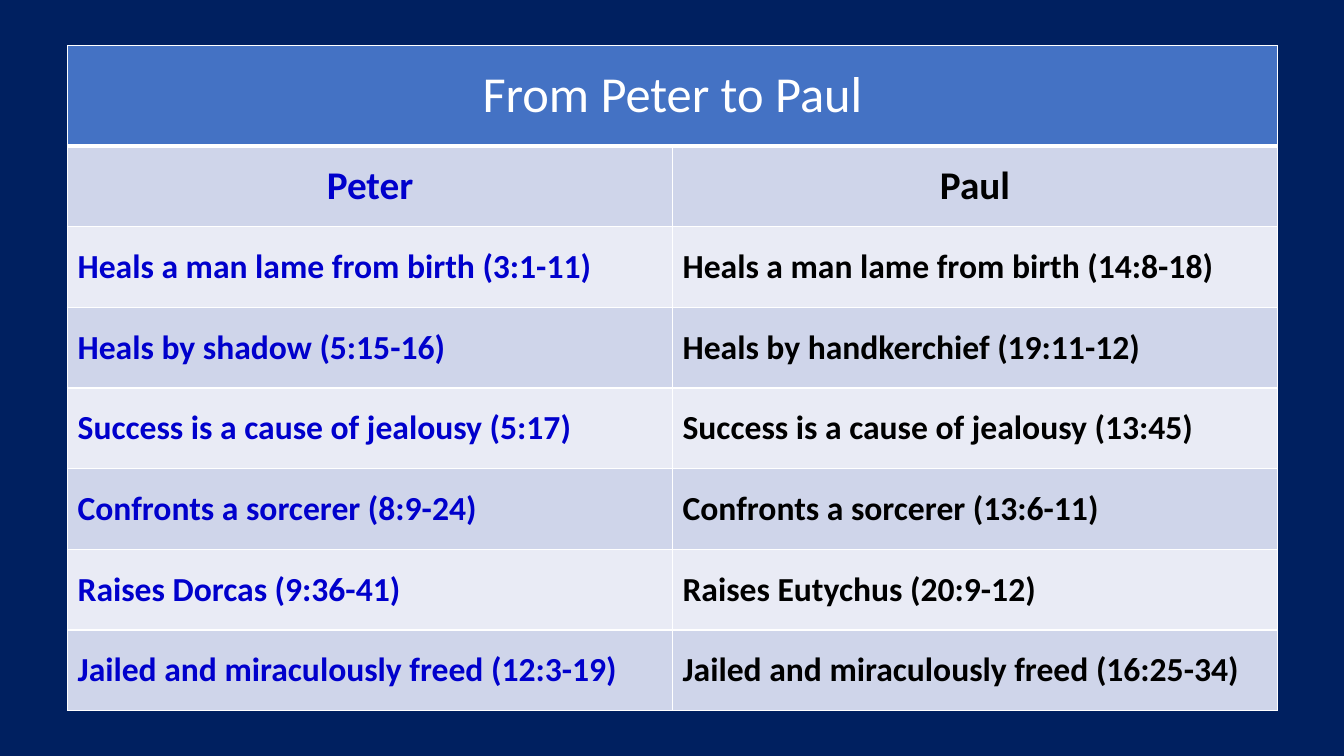
import pptx
import pptx.dml.color
import pptx.enum.text
import pptx.oxml.ns
import pptx.util
from lxml import etree

COLOURS = {
    "navy": "002060",
    "header": "4472C4",
    "band_dark": "CFD5EA",
    "band_light": "E9EBF5",
    "white": "FFFFFF",
    "peter": "0000CC",
    "paul": "000000",
}
PX = 9144  # 100 px to the inch
TITLE = "From Peter to Paul"
PARALLELS = [
    ("Peter", "Paul"),
    ("Heals a man lame from birth (3:1-11)", "Heals a man lame from birth (14:8-18)"),
    ("Heals by shadow (5:15-16)", "Heals by handkerchief (19:11-12)"),
    ("Success is a cause of jealousy (5:17)", "Success is a cause of jealousy (13:45)"),
    ("Confronts a sorcerer (8:9-24)", "Confronts a sorcerer (13:6-11)"),
    ("Raises Dorcas (9:36-41)", "Raises Eutychus (20:9-12)"),
    ("Jailed and miraculously freed (12:3-19)", "Jailed and miraculously freed (16:25-34)"),
]


def rgb(name):
    return pptx.dml.color.RGBColor.from_string(COLOURS[name])


def add_xml(parent, tag, **attributes):
    return etree.SubElement(parent, pptx.oxml.ns.qn(tag), attributes)


def write_text(frame, text, *, size, colour, font, bold=False, centred=False, space_before=0):
    """Write one formatted paragraph; space_before is a percentage."""
    paragraph = frame.paragraphs[0]
    align = pptx.enum.text.PP_ALIGN
    paragraph.alignment = align.CENTER if centred else align.LEFT
    if space_before:
        spacing = add_xml(paragraph._p.get_or_add_pPr(), "a:spcBef")
        add_xml(spacing, "a:spcPct", val=str(space_before * 1000))
    run = paragraph.add_run()
    run.text = text
    run.font.name = font
    run.font.size = pptx.util.Pt(size)
    run.font.bold = bold
    run.font.color.rgb = rgb(colour)


class SlideBuilder:
    def __init__(self, presentation, font):
        self.font = font
        self.slide = presentation.slides.add_slide(presentation.slide_layouts[6])

    def background(self, colour):
        fill = self.slide.background.fill
        fill.solid()
        fill.fore_color.rgb = rgb(colour)

    def table(self, left, top, column_widths, row_heights):
        shape = self.slide.shapes.add_table(
            len(row_heights), len(column_widths), left * PX, top * PX,
            sum(column_widths) * PX, sum(row_heights) * PX)
        table = shape.table
        table.first_row = table.horz_banding = False
        for column, width in zip(table.columns, column_widths):
            column.width = width * PX
        for row, height in zip(table.rows, row_heights):
            row.height = height * PX
        return table

    def cell(self, cell, fill, top=1, bottom=1):
        """Give a cell its fill and white borders, with widths in points."""
        properties = cell._tc.get_or_add_tcPr()
        for side, width in (("L", 1), ("R", 1), ("T", top), ("B", bottom)):
            line = add_xml(properties, f"a:ln{side}", w=str(pptx.util.Pt(width)))
            add_xml(add_xml(line, "a:solidFill"), "a:srgbClr", val=COLOURS["white"])
        cell.fill.solid()
        cell.fill.fore_color.rgb = rgb(fill)
        cell.vertical_anchor = pptx.enum.text.MSO_ANCHOR.MIDDLE

    def text(self, cell, text, **style):
        write_text(cell.text_frame, text, font=self.font, **style)


def main():
    presentation = pptx.Presentation()
    presentation.slide_width = 1333 * PX
    presentation.slide_height = 750 * PX
    builder = SlideBuilder(presentation, "Calibri")
    builder.background("navy")
    table = builder.table(67, 45, [600] * 2, [100] + [80] * len(PARALLELS))

    # Heading across both columns
    for column in range(2):
        builder.cell(table.cell(0, column), "header", bottom=3)
    table.cell(0, 0).merge(table.cell(0, 1))
    builder.text(table.cell(0, 0), TITLE, size=36, colour="white", centred=True)

    # Names, then the matching events in alternating bands
    for row, pair in enumerate(PARALLELS, start=1):
        is_names = row == 1
        for column, (text, colour) in enumerate(zip(pair, ("peter", "paul"))):
            cell = table.cell(row, column)
            builder.cell(cell, "band_dark" if row % 2 else "band_light",
                         top=3 if is_names else 1)
            builder.text(cell, text, size=28 if is_names else 24, colour=colour,
                         bold=True, centred=is_names, space_before=20)

    presentation.save("out.pptx")


if __name__ == "__main__":
    main()
